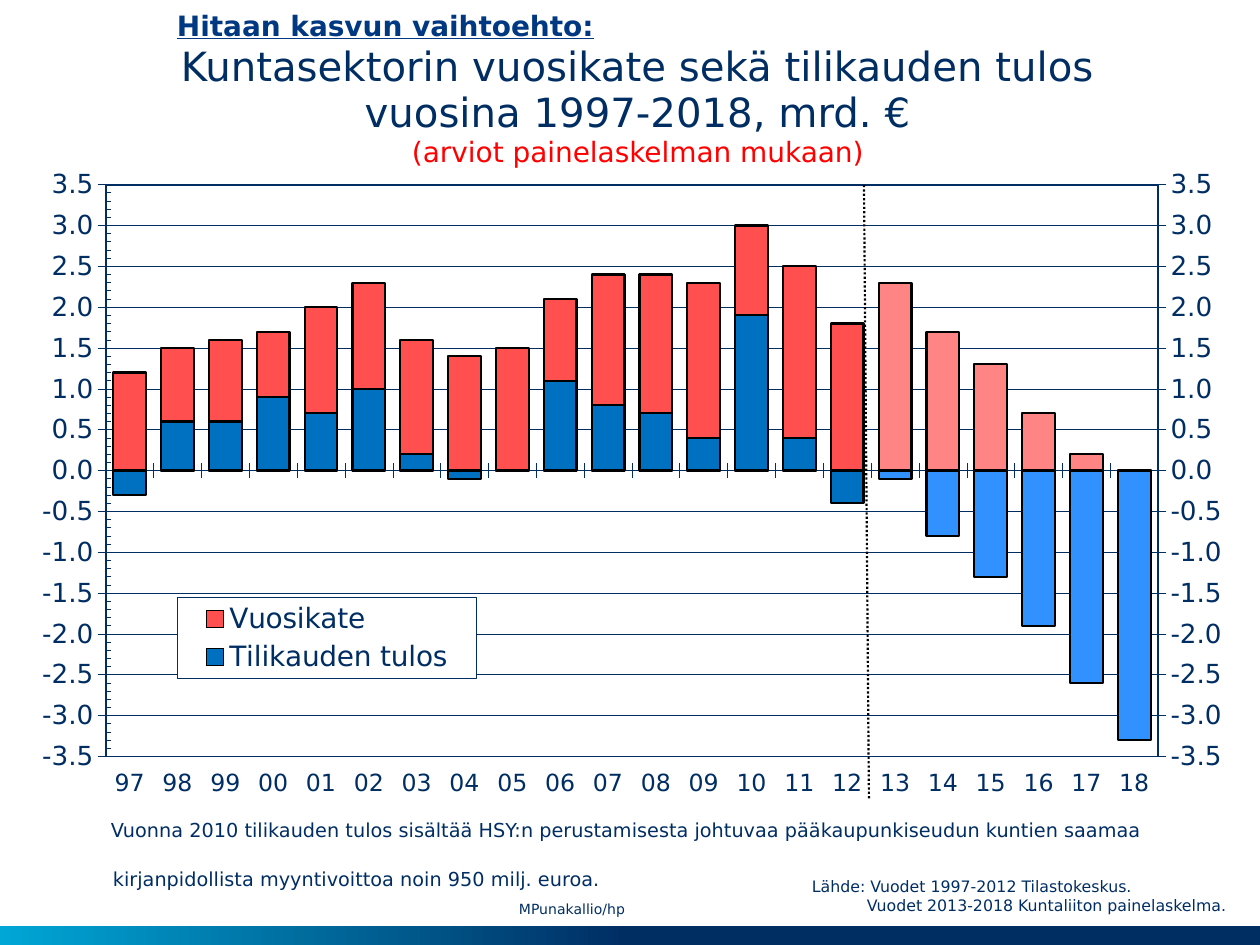
from copy import deepcopy
from dataclasses import dataclass

from lxml import etree
from pptx import Presentation
from pptx import util as u
from pptx.chart.data import CategoryChartData
from pptx.dml.color import RGBColor
from pptx.enum import chart as ch, dml, shapes, text
from pptx.oxml import parse_xml
from pptx.oxml.ns import nsdecls, qn

EMU_PER_PX = 914400 / 126
FONT = "DejaVu Sans"
NAVY, BLACK, WHITE, RED = "002E63", "000000", "FFFFFF", "FF0000"


@dataclass
class Line:
    words: str
    size: float
    color: str = NAVY
    bold: bool = False
    underline: bool = False
    indent: int = 0
    before: float = 0


@dataclass
class Block:
    box: tuple
    lines: list
    insets: tuple = (13, 6, 13, 6)
    align: text.PP_ALIGN = text.PP_ALIGN.LEFT
    anchor: text.MSO_ANCHOR = text.MSO_ANCHOR.TOP
    spacing: float = 1.0
    wrap: bool = True


@dataclass
class Measure:
    name: str
    values: tuple
    color: str
    forecast_color: str


def px(n: float) -> int:
    return round(n * EMU_PER_PX)


def rgb(value: str) -> RGBColor:
    return RGBColor.from_string(value)


def set_font(font, size: float, color: str = NAVY, bold: bool = False) -> None:
    font.name, font.size, font.bold = FONT, u.Pt(size), bold
    font.color.rgb = rgb(color)


def set_line(line, color: str, width: float) -> None:
    line.color.rgb = rgb(color)
    line.width = u.Pt(width)


def add_block(slide, block: Block) -> None:
    frame = slide.shapes.add_textbox(*map(px, block.box)).text_frame
    frame.word_wrap = block.wrap
    frame.vertical_anchor = block.anchor
    (frame.margin_left, frame.margin_top,
     frame.margin_right, frame.margin_bottom) = map(px, block.insets)
    for i, line in enumerate(block.lines):
        para = frame.paragraphs[0] if i == 0 else frame.add_paragraph()
        para.alignment, para.line_spacing = block.align, block.spacing
        if line.before:
            para.space_before = u.Pt(line.before)
        if line.indent:
            props = para._p.get_or_add_pPr()
            props.set("marL", str(px(line.indent)))
            props.set("indent", "0")
        run = para.add_run()
        run.text = line.words
        set_font(run.font, line.size, line.color, line.bold)
        run.font.underline = line.underline or None


def layout_xml(x: float, y: float, w: float, h: float, inner: bool = False):
    target = '<c:layoutTarget val="inner"/>' if inner else ""
    return parse_xml(
        f'<c:layout {nsdecls("c")}><c:manualLayout>{target}'
        '<c:xMode val="edge"/><c:yMode val="edge"/>'
        f'<c:x val="{x}"/><c:y val="{y}"/><c:w val="{w}"/><c:h val="{h}"/>'
        '</c:manualLayout></c:layout>')


def frame_xml(fill: str, width: float):
    return parse_xml(
        f'<c:spPr {nsdecls("c", "a")}>{fill}<a:ln w="{u.Pt(width)}"><a:solidFill>'
        f'<a:srgbClr val="{NAVY}"/></a:solidFill></a:ln></c:spPr>')


def drop(parent, tag: str) -> None:
    for child in parent.findall(qn(tag)):
        parent.remove(child)


def style_axis(axis, size: float) -> None:
    axis.has_major_gridlines = False
    axis.major_tick_mark = ch.XL_TICK_MARK.CROSS
    axis.minor_tick_mark = ch.XL_TICK_MARK.NONE
    set_font(axis.tick_labels.font, size)
    set_line(axis.format.line, NAVY, 0.3)


def move_to_right_axis(chart) -> None:
    """Give the second series its own bars and a value axis on the right."""
    left_bars = chart.plots[0]._element
    right_bars = deepcopy(left_bars)
    left_bars.remove(left_bars.findall(qn("c:ser"))[1])
    right_bars.remove(right_bars.findall(qn("c:ser"))[0])
    left_bars.addnext(right_bars)

    left_value = chart.value_axis._element
    right_value = deepcopy(left_value)
    right_cat = deepcopy(chart.category_axis._element)
    left_value.addnext(right_value)
    right_value.addnext(right_cat)
    new_ids = {}
    for axis, number in ((right_cat, "5001"), (right_value, "5002")):
        new_ids[axis.find(qn("c:axId")).get("val")] = number
    for part in (right_bars, right_value, right_cat):
        for ref in part.findall(qn("c:axId")) + part.findall(qn("c:crossAx")):
            ref.set("val", new_ids[ref.get("val")])
    right_value.find(qn("c:axPos")).set("val", "r")
    right_value.find(qn("c:crosses")).set("val", "max")
    right_cat.find(qn("c:delete")).set("val", "1")


def add_result_chart(slide, years: list, measures: list, first_forecast: int) -> None:
    data = CategoryChartData(number_format="0.0")
    data.categories = years
    for measure in measures:
        data.add_series(measure.name, measure.values)
    chart = slide.shapes.add_chart(ch.XL_CHART_TYPE.COLUMN_CLUSTERED,
                                   *map(px, (34, 135, 1196, 680)), data).chart
    chart.has_title = False
    set_font(chart.font, 15)

    # Bars, lighter in the forecast years
    plot = chart.plots[0]
    plot.gap_width, plot.vary_by_categories = 46, False
    for series, measure in zip(plot.series, measures):
        series.invert_if_negative = False
        formats = [(series.format, measure.color)]
        formats += [(series.points[i].format, measure.forecast_color)
                    for i in range(first_forecast, len(years))]
        for fmt, color in formats:
            fmt.fill.solid()
            fmt.fill.fore_color.rgb = rgb(color)
            set_line(fmt.line, BLACK, 1.25)

    # Axes
    style_axis(chart.category_axis, 13.5)
    chart.category_axis.tick_label_position = ch.XL_TICK_LABEL_POSITION.LOW
    values = chart.value_axis
    style_axis(values, 15)
    values.minimum_scale, values.maximum_scale, values.major_unit = -3.5, 3.5, 0.5
    values.tick_labels.number_format = "0.0"
    values.tick_labels.number_format_is_linked = False
    move_to_right_axis(chart)
    values.minor_unit = 0.1
    values.minor_tick_mark = ch.XL_TICK_MARK.INSIDE
    values.has_major_gridlines = True
    grid = values.major_gridlines.format.line
    set_line(grid, NAVY, 0.25)
    grid.dash_style = dml.MSO_LINE.ROUND_DOT

    # Plot area and legend
    area = plot._element.getparent()
    drop(area, "c:layout")
    area.insert(0, layout_xml(0.06, 0.073, 0.88, 0.841, inner=True))
    area.append(frame_xml("<a:noFill/>", 1))
    chart.has_legend = True
    legend = chart.legend
    legend.position = ch.XL_LEGEND_POSITION.RIGHT
    legend.include_in_layout = False
    set_font(legend.font, 16)
    box = legend._element
    drop(box, "c:layout")
    box.find(qn("c:legendPos")).addnext(layout_xml(0.12, 0.68, 0.25, 0.12))
    white = f'<a:solidFill><a:srgbClr val="{WHITE}"/></a:solidFill>'
    box.find(qn("c:txPr")).addprevious(frame_xml(white, 0.5))


YEARS = [f"{year % 100:02d}" for year in range(1997, 2019)]
MEASURES = [
    Measure("Vuosikate", (1.2, 1.5, 1.6, 1.7, 2, 2.3, 1.6, 1.4, 1.5, 2.1, 2.4, 2.4, 2.3,
                          3, 2.5, 1.8, 2.3, 1.7, 1.3, 0.7, 0.2, -0.5), "FF4F4F", "FF8585"),
    Measure("Tilikauden tulos", (-0.3, 0.6, 0.6, 0.9, 0.7, 1, 0.2, -0.1, 0, 1.1, 0.8, 0.7, 0.4,
                                 1.9, 0.4, -0.4, -0.1, -0.8, -1.3, -1.9, -2.6, -3.3),
            "0070C0", "3191FF"),
]
BLOCKS = [
    Block((35, 45, 1206, 128),
          [Line("Kuntasektorin vuosikate sekä tilikauden tulos", 23),
           Line("vuosina 1997-2018, mrd. €", 23),
           Line("(arviot painelaskelman mukaan)", 16, RED)],
          insets=(0, 0, 0, 0), align=text.PP_ALIGN.CENTER, spacing=0.95),
    Block((799, 871, 456, 50),
          [Line("Lähde: Vuodet 1997-2012 Tilastokeskus.", 9),
           Line("Vuodet 2013-2018 Kuntaliiton painelaskelma.", 9, indent=55)]),
    Block((89, 800, 1076, 74),
          [Line("Vuonna 2010 tilikauden tulos sisältää HSY:n perustamisesta johtuvaa "
                "pääkaupunkiseudun kuntien saamaa", 11),
           Line("kirjanpidollista myyntivoittoa noin 950 milj. euroa.", 11, indent=2, before=15)],
          insets=(22, 18, 13, 6)),
    Block((164, 3, 445, 47),
          [Line("Hitaan kasvun vaihtoehto:", 16, "003882", bold=True, underline=True)],
          wrap=False),
    Block((519, 890, 427, 37), [Line("MPunakallio/hp", 8)],
          insets=(0, 0, 0, 0), anchor=text.MSO_ANCHOR.MIDDLE),
]


def main() -> None:
    deck = Presentation()
    deck.slide_width, deck.slide_height = px(1260), px(945)
    slide = deck.slides.add_slide(deck.slide_layouts[6])

    # Footer band
    band = slide.shapes.add_shape(shapes.MSO_SHAPE.RECTANGLE, *map(px, (0, 926, 1260, 19)))
    band.shadow.inherit = False
    band.line.fill.background()
    band.fill.gradient()
    band.fill.gradient_angle = 180
    for stop, (position, color) in zip(band.fill.gradient_stops, ((0.5, NAVY), (1, "00A6D6"))):
        stop.position, stop.color.rgb = position, rgb(color)

    add_result_chart(slide, YEARS, MEASURES, YEARS.index("13"))

    # Divider between actual and forecast years
    divider = slide.shapes.add_connector(shapes.MSO_CONNECTOR.STRAIGHT,
                                         *map(px, (864, 185, 869, 800)))
    set_line(divider.line, BLACK, 1.25)
    divider.line.dash_style = dml.MSO_LINE.ROUND_DOT
    etree.SubElement(divider._element.spPr, qn("a:effectLst"))

    # Headings, notes and source
    for block in BLOCKS:
        add_block(slide, block)
    deck.save("out.pptx")


if __name__ == "__main__":
    main()
